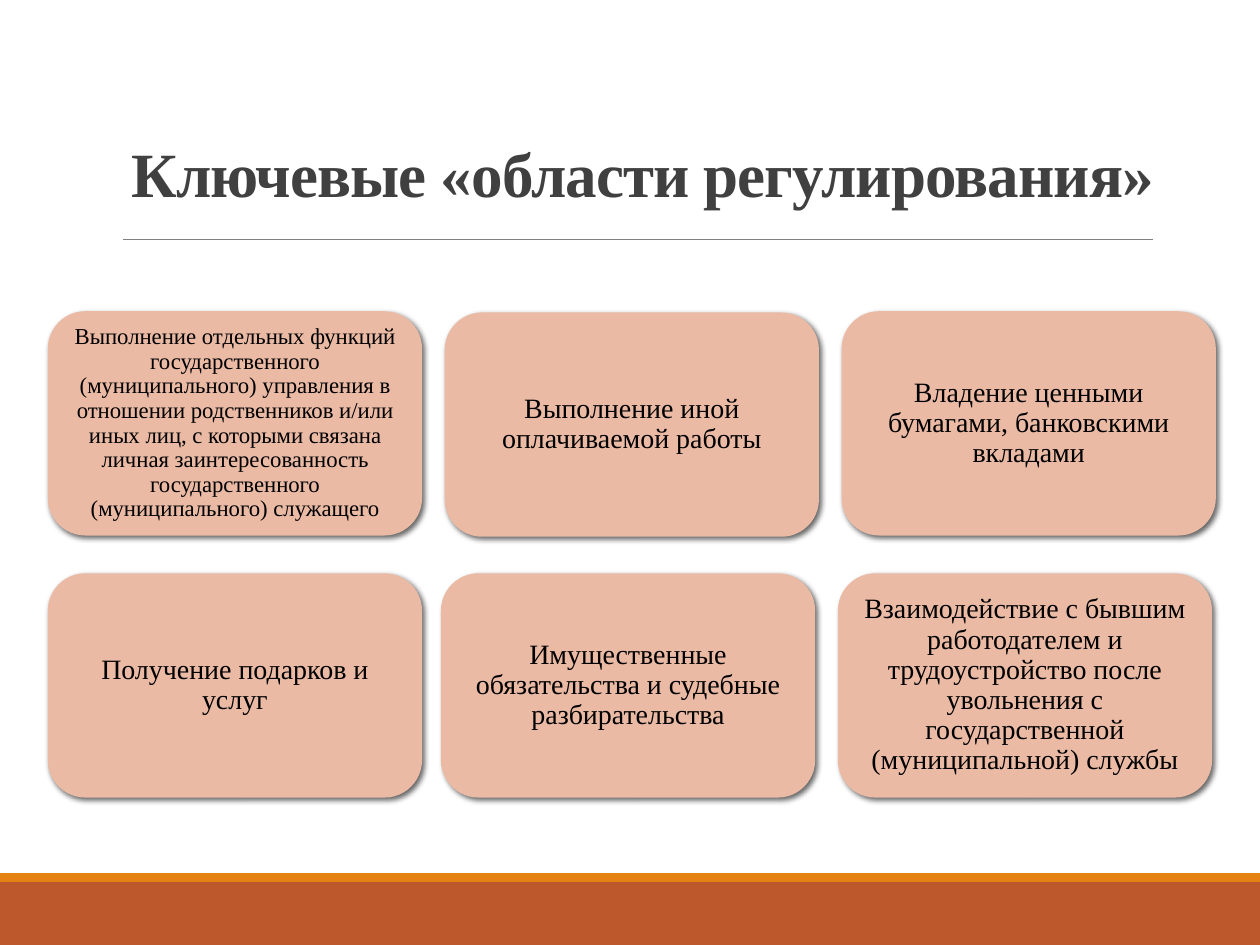
import pptx
import pptx.dml.color
import pptx.enum.shapes
import pptx.enum.text
import pptx.oxml
import pptx.oxml.ns
import pptx.util
from pptx.util import Inches

RUST = pptx.dml.color.RGBColor(0xBD, 0x58, 0x2C)
ORANGE = pptx.dml.color.RGBColor(0xE4, 0x83, 0x12)
PEACH = pptx.dml.color.RGBColor(0xEA, 0xBA, 0xA5)
GREY = pptx.dml.color.RGBColor(0x80, 0x80, 0x80)
DARK = pptx.dml.color.RGBColor(0x40, 0x40, 0x40)
BLACK = pptx.dml.color.RGBColor(0, 0, 0)

TITLE = "Ключевые «области регулирования» "
CARD_WIDTH, CARD_HEIGHT = 2.97, 1.78
CARDS = [
    (0.38, 2.47, 13, 0.05,
     "Выполнение отдельных функций государственного (муниципального) управления "
     "в отношении родственников и/или иных лиц, с которыми связана личная "
     "заинтересованность государственного (муниципального) служащего"),
    (3.53, 2.48, 16, 0.07, "Выполнение иной оплачиваемой работы"),
    (6.68, 2.47, 16, 0.07, "Владение ценными бумагами, банковскими вкладами"),
    (0.38, 4.55, 16, 0.07, "Получение подарков и услуг"),
    (3.5, 4.55, 16, 0.07, "Имущественные обязательства и судебные разбирательства"),
    (6.65, 4.55, 16, 0.07,
     "Взаимодействие с бывшим работодателем и трудоустройство после увольнения "
     "с государственной (муниципальной) службы"),
]


def set_attributes(target, values):
    for name, value in values.items():
        setattr(target, name, value)


class SlideBuilder:
    font_name = "Times New Roman"
    shadow_xml = (
        f'<a:effectLst {pptx.oxml.ns.nsdecls("a")}>'
        '<a:outerShdw blurRad="38100" dist="25400" dir="2700000" rotWithShape="0">'
        '<a:srgbClr val="000000"><a:alpha val="60000"/></a:srgbClr>'
        '</a:outerShdw></a:effectLst>'
    )

    def __init__(self, slide):
        self.slide = slide

    def fill_text(self, shape, text, frame_format, paragraph_format, font_format, color):
        frame = shape.text_frame
        frame.text = text
        set_attributes(frame, {"word_wrap": True, **frame_format})
        paragraph = frame.paragraphs[0]
        set_attributes(paragraph, {"alignment": pptx.enum.text.PP_ALIGN.CENTER,
                                   **paragraph_format})
        run = paragraph.runs[0]
        set_attributes(run.font, {"name": self.font_name, **font_format})
        run.font.color.rgb = color
        return run

    def title(self, text, left, top, width, height):
        shape = self.slide.shapes.title
        set_attributes(shape, {"left": Inches(left), "top": Inches(top),
                               "width": Inches(width), "height": Inches(height)})
        run = self.fill_text(
            shape, text,
            {"vertical_anchor": pptx.enum.text.MSO_ANCHOR.BOTTOM,
             "auto_size": pptx.enum.text.MSO_AUTO_SIZE.NONE},
            {"line_spacing": 0.85},
            {"size": pptx.util.Pt(36), "bold": True}, DARK)
        run.font._element.set("spc", "-50")

    def block(self, kind, left, top, width, height, color):
        shape = self.slide.shapes.add_shape(
            kind, Inches(left), Inches(top), Inches(width), Inches(height))
        shape.shadow.inherit = False
        shape.fill.solid()
        shape.fill.fore_color.rgb = color
        shape.line.fill.background()
        return shape

    def band(self, top, height, color):
        self.block(pptx.enum.shapes.MSO_SHAPE.RECTANGLE, 0, top, 10, height, color)

    def rule(self, left, right, top):
        line = self.slide.shapes.add_connector(
            pptx.enum.shapes.MSO_CONNECTOR.STRAIGHT,
            Inches(left), Inches(top), Inches(right), Inches(top))
        line.line.color.rgb = GREY
        line.line.width = pptx.util.Pt(0.5)
        line._element.spPr.append(
            pptx.oxml.parse_xml(f'<a:effectLst {pptx.oxml.ns.nsdecls("a")}/>'))

    def card(self, left, top, size, inset, text):
        shape = self.block(pptx.enum.shapes.MSO_SHAPE.ROUNDED_RECTANGLE,
                           left, top, CARD_WIDTH, CARD_HEIGHT, PEACH)
        properties = shape._element.spPr
        properties.replace(properties.find(pptx.oxml.ns.qn("a:effectLst")),
                           pptx.oxml.parse_xml(self.shadow_xml))
        margins = {f"margin_{side}": Inches(inset)
                   for side in ("left", "top", "right", "bottom")}
        self.fill_text(
            shape, text,
            {"vertical_anchor": pptx.enum.text.MSO_ANCHOR.MIDDLE, **margins},
            {"line_spacing": 0.9},
            {"size": pptx.util.Pt(size)}, BLACK)


def main():
    presentation = pptx.Presentation()
    set_attributes(presentation, {"slide_width": Inches(10),
                                  "slide_height": Inches(7.5)})
    slide = presentation.slides.add_slide(presentation.slide_layouts[5])
    builder = SlideBuilder(slide)
    builder.band(7, 0.5, RUST)
    builder.band(6.93, 0.07, ORANGE)
    builder.rule(0.98, 9.15, 1.9)
    for card in CARDS:
        builder.card(*card)
    builder.title(TITLE, 0.51, 0.84, 9.3, 0.88)
    presentation.save("out.pptx")


if __name__ == "__main__":
    main()
